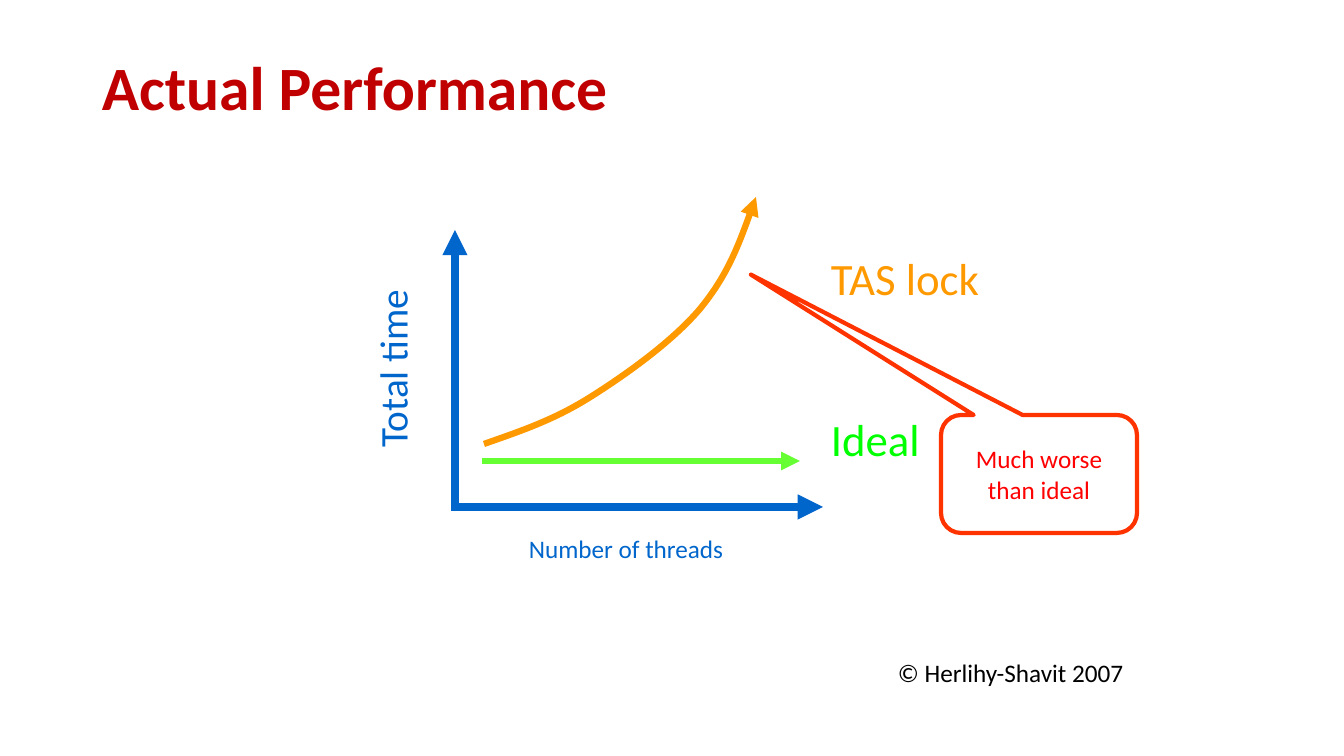
import pptx
import pptx.util
import pptx.dml.color
import pptx.enum.shapes
import pptx.enum.text
import pptx.oxml.ns

RGB = pptx.dml.color.RGBColor
RED = RGB(0xC0, 0x00, 0x00)
BLUE = RGB(0x00, 0x66, 0xCC)
ORANGE = RGB(0xFF, 0x99, 0x00)
GREEN = RGB(0x00, 0xFF, 0x00)
LIME = RGB(0x66, 0xFF, 0x33)
VERMILION = RGB(0xFF, 0x33, 0x00)
BRIGHT_RED = RGB(0xFF, 0x00, 0x00)
WHITE = RGB(0xFF, 0xFF, 0xFF)
BLACK = RGB(0x00, 0x00, 0x00)

FONT = "Calibri"
SCALE = 914400 / 100.8  # EMU per px
MIDDLE = pptx.enum.text.MSO_ANCHOR.MIDDLE
TOP = pptx.enum.text.MSO_ANCHOR.TOP
qn = pptx.oxml.ns.qn

TITLE = ("Actual Performance", (92, 18, 1159, 146), 44, RED)
# text, (left, top, width, height), size, colour, rotation
LABELS = [
    ("TAS lock", (821, 246, 180, 65), 32, ORANGE, 0),
    ("Ideal", (821, 407, 110, 65), 32, GREEN, 0),
    ("Total time", (297, 324, 200, 67), 28, BLUE, 270),
    ("Number of threads", (519, 528, 240, 50), 18, BLUE, 0),
    ("© Herlihy-Shavit 2007", (888, 652, 264, 50), 18, BLACK, 0),
]
# from, to, colour, width
ARROWS = [
    ((455, 511), (455, 230), BLUE, 6),
    ((455, 507), (823, 507), BLUE, 6),
    ((482, 461), (800, 461), LIME, 4.5),
]
# start point, then three Bezier points per segment
TAS_CURVE = [
    (484, 444),
    (518, 432), (552, 421), (589, 398),
    (624, 376), (671, 343), (700, 309),
    (727, 276), (742, 237), (756, 197),
]
CALLOUT = ("Much worse than ideal", (941, 415, 196, 118), 18, BRIGHT_RED)
CALLOUT_ADJUSTMENTS = (-1.47, -1.69, 0.17)
CALLOUT_OPACITY = 47


def emu(*lengths):
    return [pptx.util.Emu(round(n * SCALE)) for n in lengths]


def write(s, text, size, color, bold=False, anchor=TOP):
    tf = s.text_frame
    tf.word_wrap = True
    tf.vertical_anchor = anchor
    p = tf.paragraphs[0]
    r = p.add_run()
    r.text = text
    r.font.name = FONT
    r.font.size = pptx.util.Pt(size)
    r.font.bold = bold
    r.font.color.rgb = color
    return p


def style_arrow(s, color, width):
    s.line.color.rgb = color
    s.line.width = pptx.util.Pt(width)
    ln = s._element.spPr.find(qn("a:ln"))
    ln.append(ln.makeelement(qn("a:tailEnd"), {"type": "triangle"}))


def add_arrow(slide, start, end, color, width):
    s = slide.shapes.add_connector(
        pptx.enum.shapes.MSO_CONNECTOR.STRAIGHT, *emu(*start, *end))
    style_arrow(s, color, width)
    sp_pr = s._element.spPr
    sp_pr.append(sp_pr.makeelement(qn("a:effectLst"), {}))


def add_curve(slide, points, color, width):
    """Draw a freeform whose line segments are regrouped into cubic curves."""
    builder = slide.shapes.build_freeform(*points[0], scale=SCALE)
    builder.add_line_segments(points[1:], close=False)
    s = builder.convert_to_shape()
    s.shadow.inherit = False
    s.fill.background()
    style_arrow(s, color, width)
    segments = list(s._element.iter(qn("a:lnTo")))
    outline = segments[0].getparent()
    for i in range(0, len(segments), 3):
        curve = outline.makeelement(qn("a:cubicBezTo"), {})
        outline.append(curve)
        for segment in segments[i:i + 3]:
            curve.append(segment[0])
            outline.remove(segment)


def add_callout(slide, text, box, size, color):
    s = slide.shapes.add_shape(
        pptx.enum.shapes.MSO_SHAPE.ROUNDED_RECTANGULAR_CALLOUT, *emu(*box))
    for i, value in enumerate(CALLOUT_ADJUSTMENTS):
        s.adjustments[i] = value
    s.shadow.inherit = False
    s.fill.solid()
    s.fill.fore_color.rgb = WHITE
    fill_color = next(s._element.spPr.iter(qn("a:srgbClr")))
    fill_color.append(fill_color.makeelement(
        qn("a:alpha"), {"val": str(CALLOUT_OPACITY * 1000)}))
    s.line.color.rgb = VERMILION
    s.line.width = pptx.util.Pt(3)
    p = write(s, text, size, color, anchor=MIDDLE)
    p.alignment = pptx.enum.text.PP_ALIGN.CENTER


def main():
    prs = pptx.Presentation()
    prs.slide_width, prs.slide_height = emu(1344, 756)
    slide = prs.slides.add_slide(prs.slide_layouts[6])

    text, box, size, color = TITLE
    s = slide.shapes.add_textbox(*emu(*box))
    p = write(s, text, size, color, bold=True, anchor=MIDDLE)
    p.line_spacing = 0.9

    for arrow in ARROWS:
        add_arrow(slide, *arrow)
    add_curve(slide, TAS_CURVE, ORANGE, 4.5)
    for text, box, size, color, rotation in LABELS:
        s = slide.shapes.add_textbox(*emu(*box))
        s.rotation = rotation
        write(s, text, size, color)
    add_callout(slide, *CALLOUT)

    prs.save("out.pptx")


if __name__ == "__main__":
    main()
